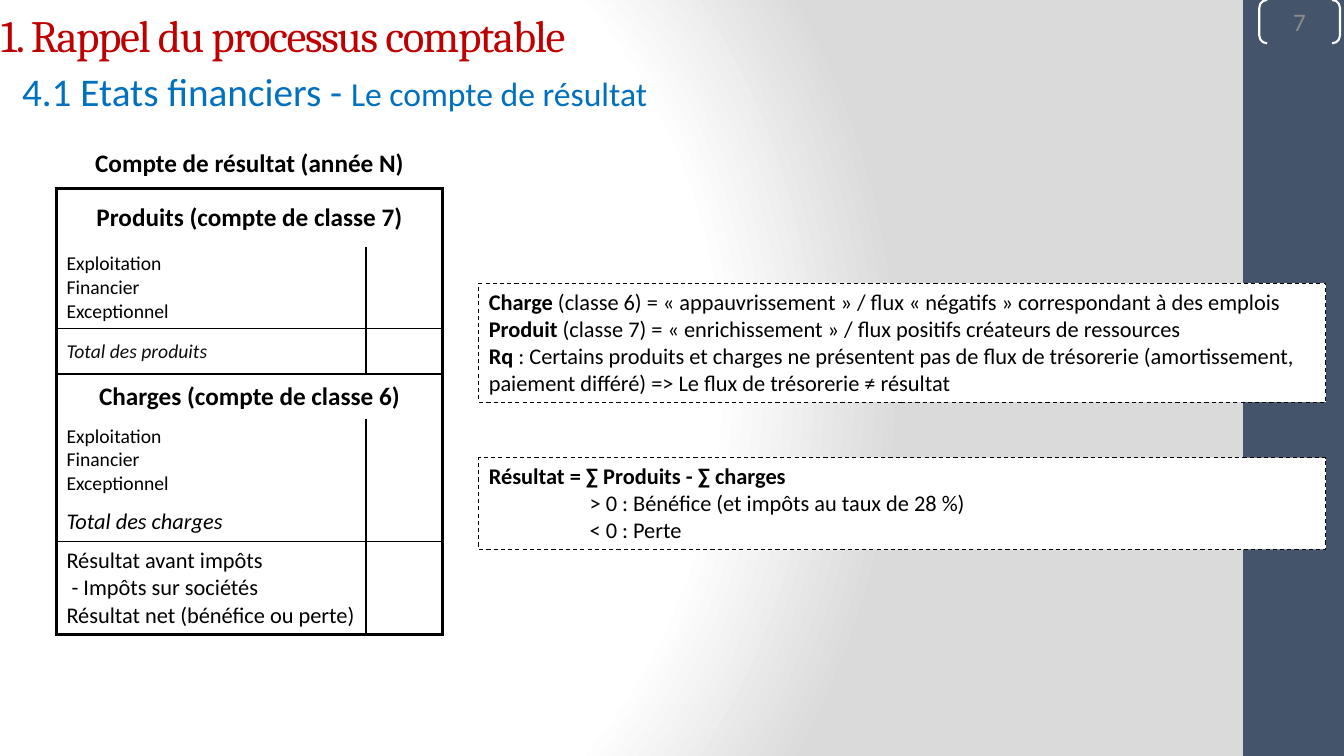
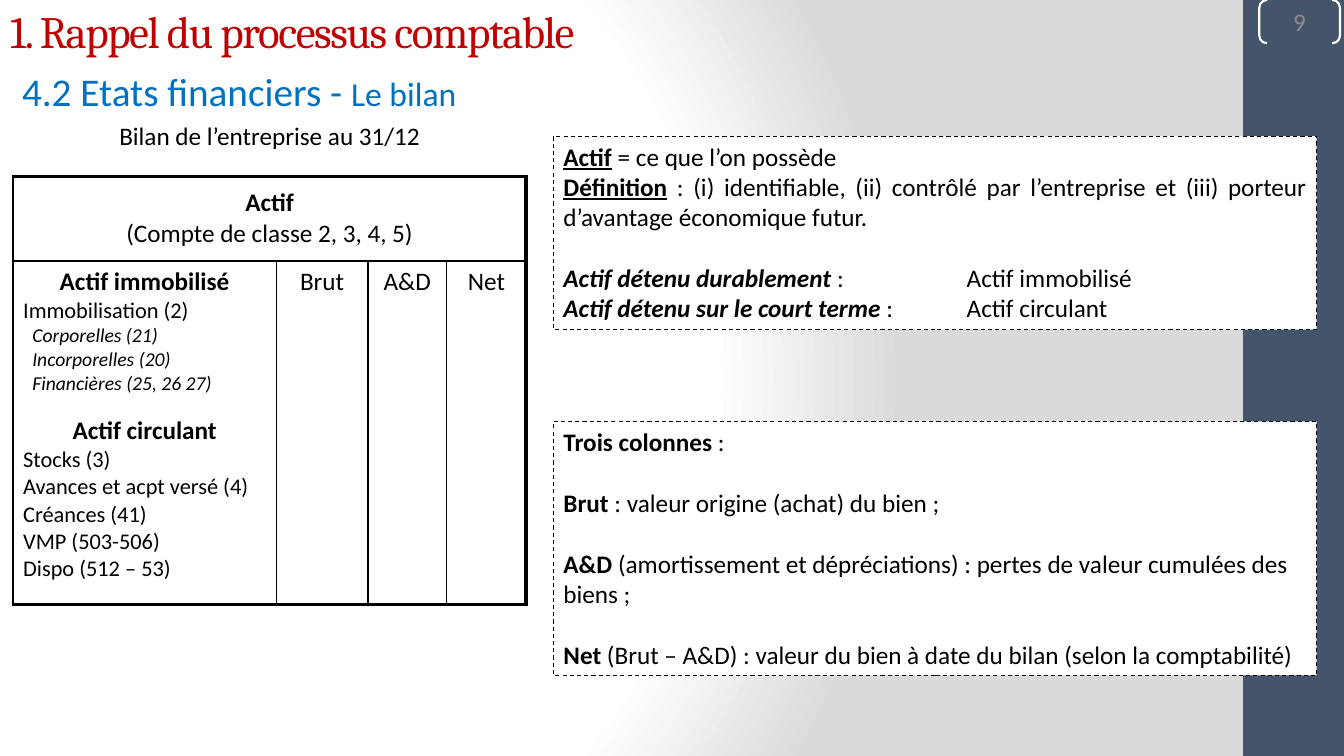
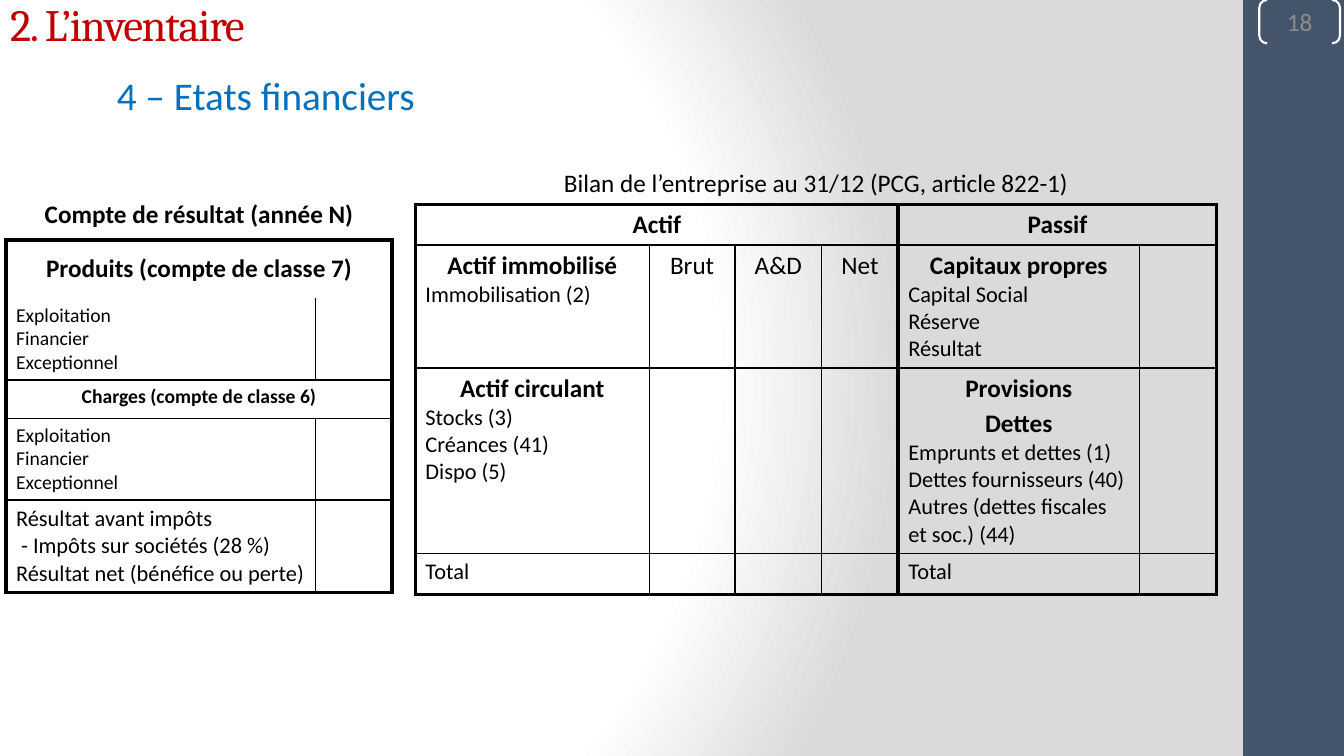
"""Build three accounting slides on the income statement and the balance sheet."""
import dataclasses

import lxml.etree
import pptx
import pptx.dml.color
import pptx.enum.dml
import pptx.enum.shapes
import pptx.enum.text
import pptx.oxml
import pptx.oxml.ns
import pptx.util

Inches = pptx.util.Inches
Pt = pptx.util.Pt
qn = pptx.oxml.ns.qn
ALIGN = pptx.enum.text.PP_ALIGN
ANCHOR = pptx.enum.text.MSO_ANCHOR
SHAPE = pptx.enum.shapes.MSO_SHAPE

COLORS = {
    "ink": "000000",
    "soft_ink": "0D0D0D",
    "paper": "FFFFFF",
    "shade": "DADADA",
    "band": "44546A",
    "number": "8C8C8C",
    "title": "C00000",
    "subtitle": "0070C0",
}
BODY_FONT = "Calibri"
TITLE_FONT = "Cambria"
NO_GRID_STYLE = "{2D5ABB26-0587-4C30-8999-92F81FD0307C}"
BACKGROUND = (
    '<a:gradFill xmlns:a="http://schemas.openxmlformats.org/drawingml/2006/main" rotWithShape="1">'
    '<a:gsLst><a:gs pos="0"><a:srgbClr val="{paper}"/></a:gs>'
    '<a:gs pos="75000"><a:srgbClr val="{paper}"/></a:gs>'
    '<a:gs pos="100000"><a:srgbClr val="{shade}"/></a:gs></a:gsLst>'
    '<a:path path="circle"><a:fillToRect l="20000" t="50000" r="100000" b="50000"/></a:path>'
    '</a:gradFill>'
)


@dataclasses.dataclass
class Para:
    """Paragraph whose runs are (text, style letters, optional size)."""
    runs: list
    size: float = 18
    align: object = ALIGN.LEFT
    indent: float = 0
    tab: float = 0
    before: float = 0
    color: str = "ink"


@dataclasses.dataclass
class Cell:
    """Table cell with its paragraphs, column span and anchor."""
    paras: list = dataclasses.field(default_factory=list)
    span: int = 1
    anchor: object = ANCHOR.TOP


def line(text, size=18, style="", **options):
    """Return a paragraph of one run."""
    return Para([(text, style)], size, **options)


def lines(*texts, size=16):
    """Return plain paragraphs of one size."""
    return [line(text, size) for text in texts]


def heading(text, size=18, style="b", **options):
    """Return a centred paragraph."""
    return line(text, size, style, align=ALIGN.CENTER, **options)


def header(text, span, **options):
    """Return a merged cell with a bold centred heading."""
    return Cell([heading(text, **options)], span, ANCHOR.MIDDLE)


def rgb(name):
    """Return the named colour."""
    return pptx.dml.color.RGBColor.from_string(COLORS[name])


def write(frame, paras):
    """Fill a text frame with paragraphs."""
    frame.word_wrap = True
    for index, para in enumerate(paras):
        target = frame.paragraphs[0] if index == 0 else frame.add_paragraph()
        target.alignment = para.align
        if para.before:
            target.space_before = Pt(para.before)
        properties = target._p.get_or_add_pPr()
        if para.indent:
            properties.set("marL", str(Inches(para.indent)))
            properties.set("indent", "0")
        if para.tab:
            stops = lxml.etree.SubElement(properties, qn("a:tabLst"))
            lxml.etree.SubElement(stops, qn("a:tab"), pos=str(Inches(para.tab)), algn="l")
        for text, style, *size in para.runs:
            run = target.add_run()
            run.text = text
            font = run.font
            font.name = BODY_FONT
            font.size = Pt(size[0] if size else para.size)
            font.color.rgb = rgb(para.color)
            font.bold = "b" in style
            font.italic = "i" in style
            font.underline = "u" in style


def set_borders(cell, widths):
    """Draw the left, right, top and bottom borders of a cell."""
    properties = cell._tc.get_or_add_tcPr()
    for side, width in zip("LRTB", widths):
        border = lxml.etree.SubElement(properties, qn(f"a:ln{side}"), w=str(Pt(width)))
        if width:
            fill = lxml.etree.SubElement(border, qn("a:solidFill"))
            lxml.etree.SubElement(fill, qn("a:srgbClr"), val=COLORS["ink"])
        else:
            lxml.etree.SubElement(border, qn("a:noFill"))
    cell.fill.background()


def add_statement(slide, left, top, widths, heights, rows, vertical, horizontal):
    """Add a table, with a rule width for each column and row boundary."""
    table = slide.shapes.add_table(
        len(rows), len(widths), Inches(left), Inches(top),
        Inches(sum(widths)), Inches(sum(heights))).table
    table.first_row = table.horz_banding = False
    table._tbl.tblPr.find(qn("a:tableStyleId")).text = NO_GRID_STYLE
    for column, width in zip(table.columns, widths):
        column.width = Inches(width)
    for table_row, height in zip(table.rows, heights):
        table_row.height = Inches(height)
    for row, cells in enumerate(rows):
        first = 0
        for content in cells:
            end = first + content.span
            sides = (vertical[first], vertical[end]) if row else (0, 0)
            for column in range(first, end):
                set_borders(table.cell(row, column), (*sides, horizontal[row], horizontal[row + 1]))
            origin = table.cell(row, first)
            if content.span > 1:
                origin.merge(table.cell(row, end - 1))
            origin.vertical_anchor = content.anchor
            write(origin.text_frame, content.paras)
            first = end


def add_note(slide, left, top, width, height, paras):
    """Add a white box with a dashed outline."""
    note = slide.shapes.add_shape(
        SHAPE.RECTANGLE, Inches(left), Inches(top), Inches(width), Inches(height))
    note.shadow.inherit = False
    note.fill.solid()
    note.fill.fore_color.rgb = rgb("paper")
    note.line.color.rgb = rgb("ink")
    note.line.width = Pt(0.75)
    note.line.dash_style = pptx.enum.dml.MSO_LINE.DASH
    note.text_frame.vertical_anchor = ANCHOR.TOP
    write(note.text_frame, paras)


def add_subtitle(slide, left, top, *runs):
    """Add the blue section line."""
    box = slide.shapes.add_textbox(Inches(left), Inches(top), Inches(10.59), Inches(0.57))
    write(box.text_frame, [Para(list(runs), 28, indent=0.12, color="subtitle")])


def add_page_number(slide, number):
    """Add the bracketed page number."""
    badge = slide.shapes.add_shape(
        SHAPE.DOUBLE_BRACKET, Inches(12.49), 0, Inches(0.8), Inches(0.43))
    badge.shadow.inherit = False
    badge.adjustments[0] = 0.18
    badge.fill.background()
    badge.line.color.rgb = rgb("paper")
    badge.line.width = Pt(1.5)
    frame = badge.text_frame
    frame.margin_left = frame.margin_right = frame.margin_top = frame.margin_bottom = 0
    frame.vertical_anchor = ANCHOR.MIDDLE
    write(frame, [heading(number, style="", color="number")])


def add_slide(deck, title, left, top, number):
    """Add a slide with its title and page number."""
    slide = deck.slides.add_slide(deck.slide_layouts[5])
    holder = slide.shapes.title
    holder.left, holder.top = Inches(left), Inches(top)
    holder.width, holder.height = Inches(11.2), Inches(0.63)
    frame = holder.text_frame
    frame.text = title
    frame.word_wrap = True
    frame.vertical_anchor = ANCHOR.MIDDLE
    frame.paragraphs[0].alignment = ALIGN.LEFT
    run = frame.paragraphs[0].runs[0]
    run.font.name = TITLE_FONT
    run.font.size = Pt(32)
    run.font.color.rgb = rgb("title")
    run._r.get_or_add_rPr().set("spc", "-100")
    add_page_number(slide, number)
    return slide


def style_master(deck, slide):
    """Give the master its gradient and its side band."""
    master = deck.slide_master
    master.background.fill.solid()
    properties = master._element.cSld.find(qn("p:bg")).find(qn("p:bgPr"))
    solid = properties.find(qn("a:solidFill"))
    properties.replace(solid, pptx.oxml.parse_xml(BACKGROUND.format(**COLORS)))
    band = slide.shapes.add_shape(
        SHAPE.RECTANGLE, Inches(12.33), 0, Inches(1), deck.slide_height)
    band.shadow.inherit = False
    band.fill.solid()
    band.fill.fore_color.rgb = rgb("band")
    band.line.fill.background()
    master.shapes._spTree.insert(2, band._element)


def result_lines(tax):
    """Return the lines from pre-tax to net result."""
    return [line("Résultat avant impôts", 16), line(tax, 16, indent=0.05),
            line("Résultat net (bénéfice ou perte)", 16)]


def build_income_slide(slide):
    """Fill the slide on the income statement."""
    nature = lines("Exploitation", "Financier", "Exceptionnel", size=14)
    rows = [
        [Cell([heading("Compte de résultat (année N)")], 2)],
        [header("Produits (compte de classe 7)", 2)],
        [Cell(nature), Cell()],
        [Cell([line("Total des produits", 14, "i", color="soft_ink")], anchor=ANCHOR.MIDDLE), Cell()],
        [header("Charges (compte de classe 6)", 2)],
        [Cell(nature), Cell()],
        [Cell([line("Total des charges", 16, "i")], anchor=ANCHOR.MIDDLE), Cell()],
        [Cell(result_lines("- Impôts sur sociétés")), Cell()],
    ]
    add_statement(slide, 0.56, 1.42, [3.07, 0.76],
                  [0.45, 0.58, 0.81, 0.45, 0.45, 0.81, 0.37, 0.91], rows,
                  [3, 1, 3], [0, 3, 0, 1, 1, 0, 0, 1, 2.25])
    add_note(slide, 4.75, 2.81, 8.4, 1.18, [
        Para([("Charge", "b"), (" (classe 6) = « appauvrissement » / flux « négatifs » "
                                "correspondant à des emplois", "")], 16),
        Para([("Produit", "b"), (" (classe 7) = « enrichissement » / flux positifs "
                                 "créateurs de ressources", "")], 16),
        Para([("Rq", "b"), (" : Certains produits et charges ne présentent pas de flux de "
                            "trésorerie (amortissement, paiement différé) => Le flux de "
                            "trésorerie ≠ résultat", "")], 16),
    ])
    add_note(slide, 4.75, 4.54, 8.4, 0.91, [
        line("Résultat = ∑ Produits - ∑ charges", 16, "b"),
        line("> 0 : Bénéfice (et impôts au taux de 28 %)", 16, indent=1),
        line("< 0 : Perte", 16, indent=1),
    ])
    add_subtitle(slide, 0, 0.62, ("4.1 Etats financiers - ", ""), ("Le compte de résultat", "", 24))


def build_assets_slide(slide):
    """Fill the slide on the asset side of the balance sheet."""
    fixed = [heading("Actif immobilisé"), line("Immobilisation (2)", 16)]
    fixed += [line(text, 14, "i", indent=0.09) for text in (
        "Corporelles (21)", "Incorporelles (20)", "Financières (25, 26 27)")]
    current = [heading("Actif circulant")] + lines(
        "Stocks (3)", "Avances et acpt versé (4)", "Créances (41)", "VMP (503-506)",
        "Dispo (512 – 53)")
    amounts = [Cell([heading(name, style="")]) for name in ("Brut", "A&D", "Net")]
    rows = [
        [Cell([heading("Bilan de l’entreprise au 31/12", style="")], 4)],
        [Cell([heading("Actif"), heading("(Compte de classe 2, 3, 4, 5)", style="")],
              4, ANCHOR.MIDDLE)],
        [Cell(fixed), *amounts],
        [Cell(current), Cell(), Cell(), Cell()],
    ]
    add_statement(slide, 0.13, 1.16, [2.61, 0.91, 0.78, 0.79], [0.59, 0.84, 1.48, 1.93],
                  rows, [2.25, 1, 1, 1, 3], [0, 2.25, 1, 0, 2.25])
    add_note(slide, 5.49, 4.18, 7.57, 2.52, [
        Para([("Trois colonnes ", "b"), (":", "")]),
        Para([("Brut", "b"), (" : valeur origine (achat) du bien ;", "")], before=22),
        Para([("A&D", "b"), (" (amortissement et dépréciations) : pertes de valeur "
                             "cumulées des biens ;", "")], before=22),
        Para([("Net", "b"), (" (Brut – A&D) : valeur du bien à date du bilan "
                             "(selon la comptabilité)", "")], before=22),
    ])
    add_note(slide, 5.49, 1.35, 7.57, 1.92, [
        Para([("Actif", "bu"), (" = ce que l’on possède", "")]),
        Para([("Définition", "bu"), (" : (i) identifiable, (ii) contrôlé par l’entreprise et "
                                     "(iii) porteur d’avantage économique futur.", "")],
             align=ALIGN.JUSTIFY),
        Para([("Actif détenu durablement ", "bi"), (": \tActif immobilisé", "")],
             tab=4, before=22),
        Para([("Actif détenu sur le court terme ", "bi"), (": \tActif circulant", "")], tab=4),
    ])
    add_subtitle(slide, 0, 0.62, ("4.2 Etats financiers - ", ""), ("Le bilan", "", 24))


def build_inventory_slide(slide):
    """Fill the slide that sets both statements side by side."""
    amounts = [Cell([heading(name, style="")]) for name in ("Brut", "A&D", "Net")]
    blanks = [Cell(), Cell(), Cell()]
    equity = [heading("Capitaux propres")] + lines("Capital Social", "Réserve", "Résultat")
    debts = [heading("Provisions"), heading("Dettes", before=3)] + lines(
        "Emprunts et dettes (1)", "Dettes fournisseurs (40)",
        "Autres (dettes fiscales et soc.) (44)")
    current = [heading("Actif circulant")] + lines("Stocks (3)", "Créances (41)", "Dispo (5)")
    total = Cell(lines("Total"))
    balance = [
        [Cell([heading("Bilan de l’entreprise au 31/12 (PCG, article 822-1)", style="")], 6)],
        [header("Actif", 4), header("Passif", 2)],
        [Cell([heading("Actif immobilisé")] + lines("Immobilisation (2)")), *amounts,
         Cell(equity), Cell()],
        [Cell(current), *blanks, Cell(debts), Cell()],
        [total, *blanks, total, Cell()],
    ]
    add_statement(slide, 4.12, 1.62, [2.32, 0.85, 0.86, 0.76, 2.39, 0.77],
                  [0.4, 0.4, 1.22, 1.84, 0.4], balance,
                  [2.25, 1, 1, 1, 3, 1, 2.25], [0, 2.25, 1, 1, 1, 2.25])
    nature = lines("Exploitation", "Financier", "Exceptionnel", size=14)
    income = [
        [Cell([heading("Compte de résultat (année N)")], 2)],
        [header("Produits (compte de classe 7)", 2)],
        [Cell(nature), Cell()],
        [Cell([heading("Charges (compte de classe 6)", 14)], 2)],
        [Cell(nature), Cell()],
        [Cell(result_lines("- Impôts sur sociétés (28 %)")), Cell()],
    ]
    add_statement(slide, 0.06, 1.93, [3.07, 0.76], [0.45, 0.58, 0.81, 0.38, 0.81, 0.91],
                  income, [3, 1, 3], [0, 3, 0, 1, 1, 1, 2.25])
    add_subtitle(slide, 0.94, 0.66, ("4 – Etats financiers", ""))


def main():
    """Build and save the deck."""
    deck = pptx.Presentation()
    deck.slide_width, deck.slide_height = Inches(13.33), Inches(7.5)
    reminder = "1. Rappel du processus comptable"
    income = add_slide(deck, reminder, -0.09, 0.03, "7")
    style_master(deck, income)
    build_income_slide(income)
    build_assets_slide(add_slide(deck, reminder, 0, -0.01, "9"))
    build_inventory_slide(add_slide(deck, "2. L’inventaire", 0, -0.08, "18"))
    deck.save("out.pptx")


if __name__ == "__main__":
    main()
